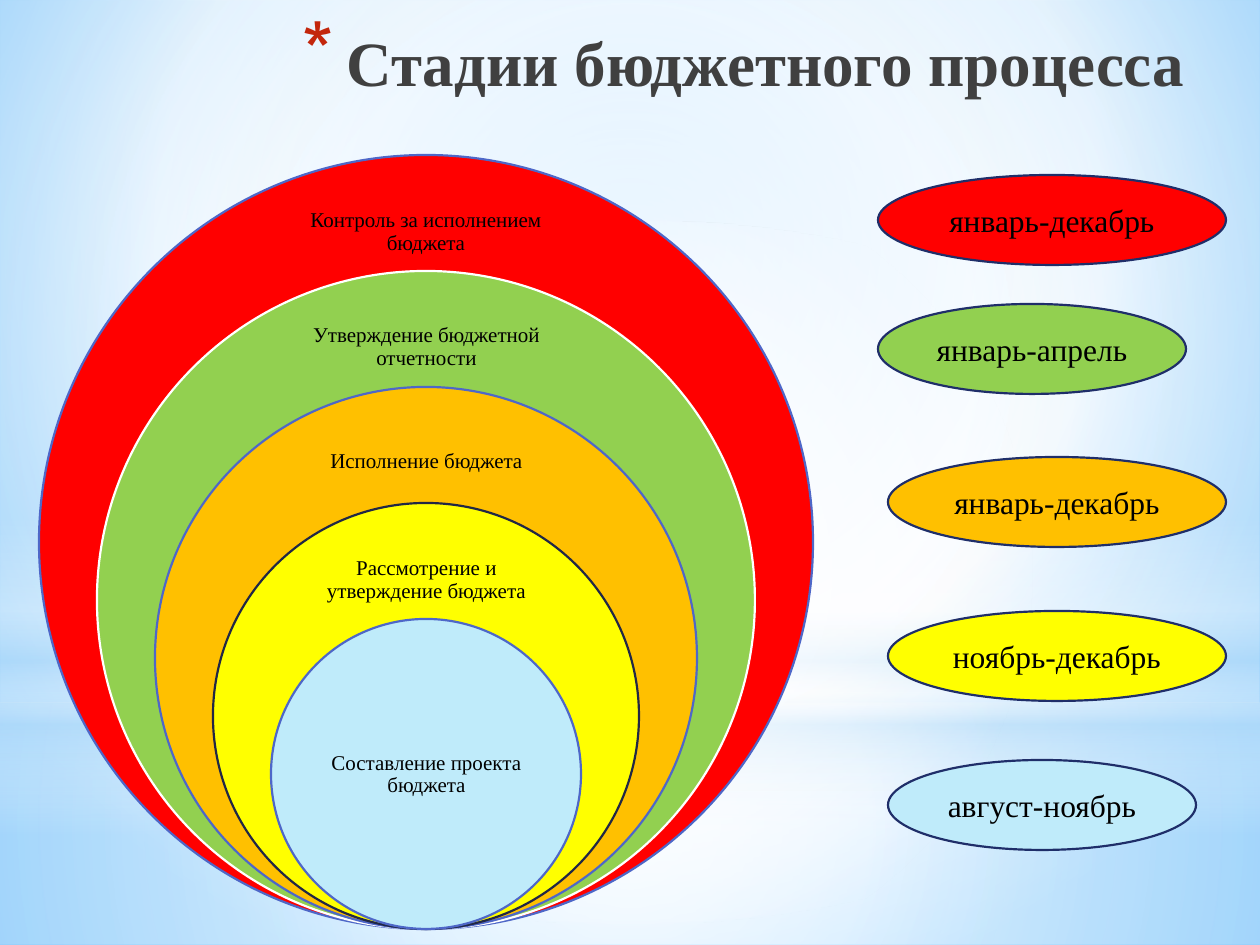
from lxml.etree import SubElement
from pptx import Presentation
from pptx.dml.color import RGBColor
from pptx.enum.shapes import MSO_SHAPE
from pptx.enum.text import MSO_ANCHOR, PP_ALIGN
from pptx.oxml import parse_xml
from pptx.oxml.ns import nsdecls, qn
from pptx.util import Emu, Pt

EMU_PER_PX = 914400 / 126
FONT = "Times New Roman"
COLORS = {
    "red": "FF0000", "green": "92D050", "orange": "FFC000", "yellow": "FFFF00",
    "ice": "BFEBFA", "blue": "4E67C8", "navy": "1F2E69", "dark": "212745",
    "white": "FFFFFF", "black": "000000", "title": "404040", "bullet": "C3260C",
    "sky": "9ED5FF", "deep_sky": "5BB9FF", "haze": "B4DCFA",
}


def px(n):
    return Emu(round(n * EMU_PER_PX))


def rgb(name):
    return RGBColor.from_string(COLORS[name])


def gradient(stops, center=None):
    gs = "".join(
        f'<a:gs pos="{pos * 1000}"><a:srgbClr val="{COLORS[color]}">'
        f'<a:alpha val="{alpha * 1000}"/></a:srgbClr></a:gs>'
        for pos, color, alpha in stops)
    if center:
        sides = " ".join(f'{k}="{v * 1000}"' for k, v in zip("ltrb", center))
        shade = f'<a:path path="circle"><a:fillToRect {sides}/></a:path>'
    else:
        shade = '<a:lin ang="5400000" scaled="0"/>'
    return parse_xml(f'<a:gradFill {nsdecls("a")} rotWithShape="1">'
                     f'<a:gsLst>{gs}</a:gsLst>{shade}</a:gradFill>')


class Deck:
    def __init__(self, width, height):
        self.prs = Presentation()
        self.prs.slide_width, self.prs.slide_height = px(width), px(height)
        self.s = self.prs.slides.add_slide(self.prs.slide_layouts[6])

    def background(self, stops, center):
        fill = self.s.background.fill
        fill.solid()
        solid = self.s._element.find(".//" + qn("a:solidFill"))
        solid.getparent().replace(solid, gradient(stops, center))

    def shape(self, kind, box, fill, line=None):
        sp = self.s.shapes.add_shape(kind, *map(px, box))
        sp.shadow.inherit = False
        sp.fill.solid()
        sp.fill.fore_color.rgb = rgb(fill)
        if line:
            sp.line.color.rgb = rgb(line)
            sp.line.width = Pt(1.25)
        else:
            sp.line.fill.background()
        return sp

    def glow(self, kind, box, stops, center=None):
        sp = self.shape(kind, box, "white")
        solid = sp._element.spPr.find(qn("a:solidFill"))
        solid.getparent().replace(solid, gradient(stops, center))

    def set_text(self, sp, text, size, color="black", align=PP_ALIGN.CENTER, bold=False):
        tf = sp.text_frame
        tf.word_wrap = True
        tf.vertical_anchor = MSO_ANCHOR.MIDDLE
        tf.text = text
        p = tf.paragraphs[0]
        p.alignment = align
        font = p.runs[0].font
        font.name, font.size, font.bold = FONT, Pt(size), bold
        font.color.rgb = rgb(color)
        return p

    def title(self, box, text):
        sp = self.s.shapes.add_textbox(*map(px, box))
        p = self.set_text(sp, text, 36, "title", PP_ALIGN.RIGHT, True)
        pPr = p._p.get_or_add_pPr()
        pPr.set("marL", str(px(44)))
        pPr.set("indent", str(-px(44)))
        SubElement(SubElement(pPr, qn("a:buClr")), qn("a:srgbClr")).set("val", COLORS["bullet"])
        SubElement(pPr, qn("a:buSzPct")).set("val", "128000")
        SubElement(pPr, qn("a:buChar")).set("char", "*")

    def label(self, box, text):
        sp = self.s.shapes.add_textbox(*map(px, box))
        tf = sp.text_frame
        tf.margin_left = tf.margin_right = tf.margin_top = tf.margin_bottom = px(11)
        self.set_text(sp, text, 12).line_spacing = 0.9

    def ellipse(self, box, fill, line, text=None):
        sp = self.shape(MSO_SHAPE.OVAL, box, fill, line)
        if text:
            self.set_text(sp, text, 18)


def main():
    deck = Deck(1260, 945)
    middle = (50, 50, 50, 50)
    deck.background([(0, "sky", 100), (60, "white", 100), (100, "deep_sky", 100)],
                    (20, 10, 20, 60))
    deck.glow(MSO_SHAPE.RECTANGLE, (0, 703, 1260, 242),
              [(0, "white", 91), (37, "white", 76), (100, "haze", 79)], middle)
    deck.glow(MSO_SHAPE.RECTANGLE, (0, 0, 1260, 703),
              [(0, "white", 89), (48, "white", 62), (100, "haze", 79)], middle)
    deck.glow(MSO_SHAPE.RECTANGLE, (0, 519, 1260, 315),
              [(0, "white", 0), (29, "white", 30), (45, "haze", 40),
               (55, "white", 26), (65, "haze", 60), (100, "white", 0)])
    deck.glow(MSO_SHAPE.OVAL, (0, 221, 1260, 703),
              [(0, "white", 100), (56, "white", 0)], middle)
    deck.title((63, 6, 1134, 110), "Стадии бюджетного процесса")

    stages = [
        ("Контроль за исполнением бюджета", "red", "blue", 194, 290, 77),
        ("Утверждение бюджетной отчетности", "green", "white", 309, 283, 76),
        ("Исполнение бюджета", "orange", "blue", 425, 281, 74),
        ("Рассмотрение и утверждение бюджета", "yellow", "dark", 542, 229, 77),
        ("Составление проекта бюджета", "ice", "blue", 697, 219, 155),
    ]
    center_x, bottom, step = 426, 929, 116
    for i, (text, fill, line, top, width, height) in enumerate(stages):
        size = 774 - step * i
        deck.ellipse((center_x - size // 2, bottom - size, size, size), fill, line)
        deck.label((center_x - width // 2, top, width, height), text)

    periods = [
        ("август-ноябрь", "ice", 888, 760, 308),
        ("ноябрь-декабрь", "yellow", 888, 611, 338),
        ("январь-декабрь", "orange", 888, 457, 338),
        ("январь-апрель", "green", 878, 304, 308),
        ("январь-декабрь", "red", 878, 175, 348),
    ]
    for text, fill, left, top, width in periods:
        deck.ellipse((left, top, width, 90), fill, "navy", text)

    deck.prs.save("out.pptx")


if __name__ == "__main__":
    main()
